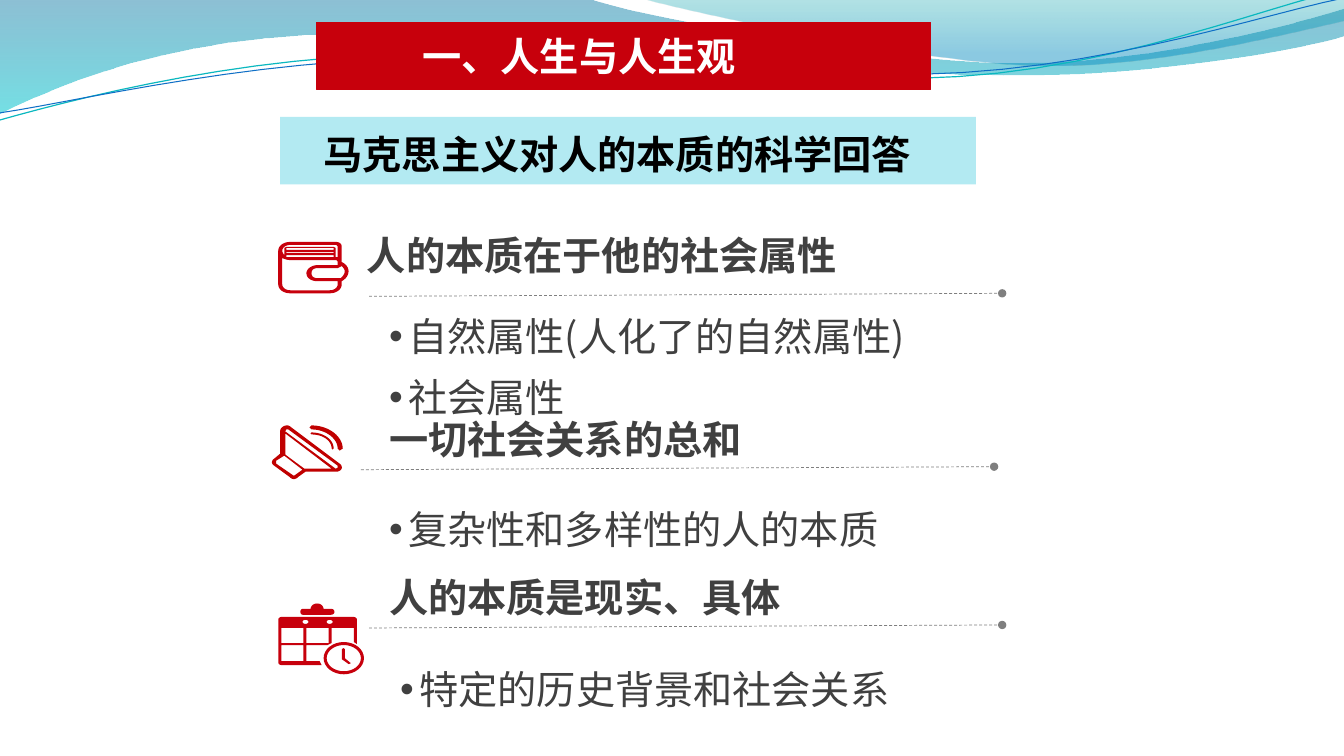
from dataclasses import dataclass
from math import cos, pi, sin

from lxml.etree import SubElement
from pptx import Presentation
from pptx.dml.color import RGBColor
from pptx.enum.dml import MSO_LINE
from pptx.enum.shapes import MSO_CONNECTOR, MSO_SHAPE
from pptx.enum.text import MSO_ANCHOR, MSO_AUTO_SIZE, PP_ALIGN
from pptx.oxml.ns import qn
from pptx.util import Inches, Pt


@dataclass(frozen=True)
class Theme:
    font: str = "Noto Sans CJK SC"
    size: int = 28
    red: str = "C7000C"
    dark_red: str = "C00000"
    pale: str = "B3EAF2"
    ink: str = "404040"
    black: str = "000000"
    white: str = "FFFFFF"
    rule: str = "7F7F7F"
    teal: str = "0AB8BF"
    blue: str = "0F6FC6"


T = Theme()
W, H = 13.33, 7.5

TITLE = "一、人生与人生观"
SUBTITLE = "马克思主义对人的本质的科学回答"
# heading, its left and top, rule start, bullets, their left, top and size
SECTIONS = [
    ("人的本质在于他的社会属性", (3.56, 2.25, 4.89, 0.55), (3.66, 2.94),
     ["自然属性(人化了的自然属性)", "社会属性"], (3.78, 2.92, 7.32, 1.3)),
    ("一切社会关系的总和", (3.78, 4.08, 3.71, 0.55), (3.58, 4.66),
     ["复杂性和多样性的人的本质"], (3.78, 4.83, 6.82, 0.69)),
    ("人的本质是现实、具体", (3.78, 5.65, 4.1, 0.55), (3.66, 6.23),
     ["特定的历史背景和社会关系"], (3.89, 6.42, 8.13, 0.69)),
]
RULE_RUN, RULE_RISE = 6.28, 0.03

# Outlines: a pair is a corner, six numbers are a Bezier curve
WAVES = [
    ([(0, 0), (5.87, 0), (6.34, 0.17, 8.85, 0.63, 10.11, 0.63), (11.38, 0.63, 12.78, 0.26, W, 0.09),
      (W, 0.36), (13.11, 0.44, 11.6, 0.76, 9.94, 0.75), (8.29, 0.75, 5.09, 0.28, 3.43, 0.34),
      (1.72, 0.36, 0.61, 0.83, 0, 1.13)],
     [(0, "0074A1", 45), (1, "00C6CF", 55)]),
    ([(6.39, 0), (6.79, 0.11, 9.09, 0.62, 10.25, 0.65), (11.41, 0.69, 12.82, 0.32, W, 0.21), (W, 0)],
     [(0, "00A1A9", 30), (0.8, "008BBF", 45)]),
]
THREADS = [
    ([(0, 1.19), (0.64, 1.01, 2.11, 0.62, 3.69, 0.55), (5.27, 0.48, 7.9, 0.87, 9.5, 0.76),
      (11.1, 0.66, 12.52, 0.08, 13.31, -0.1)], T.teal, 0.85),
    ([(0, 1.12), (0.63, 1.03, 2.18, 0.66, 3.78, 0.59), (5.37, 0.53, 7.96, 0.82, 9.55, 0.72),
      (11.15, 0.62, 12.55, 0.14, W, -0.02)], T.blue, 0.75),
]


def box(x, y, w, h):
    return [(x, y), (x + w, y), (x + w, y + h), (x, y + h)]


def oval(cx, cy, rx, ry, n=32):
    return [(cx + rx * cos(2 * pi * i / n), cy + ry * sin(2 * pi * i / n)) for i in range(n)]


WALLET = [
    [(3.39, 2.6), (3.39, 2.45), (3.39, 2.42, 3.37, 2.4, 3.33, 2.4), (2.88, 2.4),
     (2.81, 2.4, 2.76, 2.44, 2.76, 2.49), (2.76, 2.82), (2.76, 2.87, 2.81, 2.91, 2.88, 2.91),
     (3.27, 2.91), (3.34, 2.91, 3.39, 2.87, 3.39, 2.82), (3.39, 2.79), (3.48, 2.74, 3.48, 2.64, 3.39, 2.6)],
    [(2.88, 2.43), (3.33, 2.43), (3.34, 2.43, 3.35, 2.44, 3.35, 2.45), (3.35, 2.55), (3.33, 2.55),
     (3.33, 2.46), (3.31, 2.45), (2.84, 2.45), (2.82, 2.46), (2.82, 2.53),
     (2.81, 2.52, 2.8, 2.5, 2.8, 2.49), (2.8, 2.46, 2.83, 2.43, 2.88, 2.43)],
    *[box(2.84, y, 0.47, h) for y, h in ((2.46, 0.02), (2.5, 0.01), (2.53, 0.02))],
    [(3.35, 2.82), (3.35, 2.85, 3.32, 2.88, 3.27, 2.88), (2.88, 2.88), (2.83, 2.88, 2.8, 2.85, 2.8, 2.82),
     (2.8, 2.56), (2.82, 2.57, 2.85, 2.58, 2.88, 2.58), (3.33, 2.58), (3.34, 2.58, 3.35, 2.59, 3.35, 2.6),
     (3.35, 2.63), (3.15, 2.63), (3.09, 2.63, 3.04, 2.67, 3.04, 2.71),
     (3.04, 2.76, 3.09, 2.79, 3.15, 2.79), (3.35, 2.79)],
    [(3.38, 2.76), (3.15, 2.76), (3.11, 2.76, 3.09, 2.74, 3.09, 2.71), (3.09, 2.68, 3.11, 2.66, 3.15, 2.66),
     (3.35, 2.66), (3.39, 2.64), (3.4, 2.65, 3.42, 2.67, 3.42, 2.69), (3.42, 2.72, 3.4, 2.74, 3.38, 2.76)],
]
SPEAKER = [
    [(2.89, 4.24), (2.88, 4.23, 2.86, 4.22, 2.85, 4.22), (2.81, 4.22, 2.78, 4.25, 2.78, 4.27), (2.78, 4.5),
     (2.72, 4.55), (2.69, 4.57, 2.69, 4.6, 2.72, 4.62), (2.87, 4.73), (2.9, 4.76, 2.93, 4.76, 2.96, 4.73),
     (3.03, 4.68), (3.33, 4.68), (3.39, 4.68, 3.41, 4.63, 3.37, 4.6)],
    [(3, 4.66), (2.93, 4.71), (2.92, 4.72, 2.91, 4.72, 2.9, 4.71), (2.74, 4.6), (2.74, 4.57), (2.82, 4.52)],
    [(3.02, 4.65), (2.83, 4.51), (2.83, 4.3), (3.29, 4.65)],
    [(3.35, 4.64), (3.33, 4.65), (2.83, 4.28), (2.84, 4.26), (2.86, 4.26), (3.35, 4.62)],
    [(3.29, 4.45), (3.3, 4.46), (3.31, 4.45), (3.31, 4.36, 3.21, 4.29, 3.09, 4.29), (3.08, 4.3),
     (3.09, 4.31), (3.2, 4.31, 3.29, 4.37, 3.29, 4.45)],
    [(3.09, 4.26), (3.23, 4.26, 3.35, 4.35, 3.35, 4.45), (3.37, 4.47), (3.4, 4.45),
     (3.4, 4.33, 3.26, 4.22, 3.09, 4.22), (3.07, 4.24)],
]
CALENDAR = [
    [(2.98, 6.07), (2.98, 6.09, 2.99, 6.1, 3.01, 6.1), (3.28, 6.1), (3.33, 6.1, 3.33, 6.04, 3.28, 6.04),
     (3.21, 6.04), (3.2, 5.97, 3.09, 5.97, 3.08, 6.04), (3.01, 6.04), (2.99, 6.04, 2.98, 6.05, 2.98, 6.07)],
    [(3.19, 6.6), (2.8, 6.6), (2.78, 6.6, 2.76, 6.59, 2.76, 6.57), (2.76, 6.15),
     (2.76, 6.13, 2.78, 6.12, 2.8, 6.12), (3.5, 6.12), (3.52, 6.12, 3.54, 6.13, 3.54, 6.15), (3.54, 6.39),
     (3.51, 6.37), (3.51, 6.23), (3.29, 6.23), (3.29, 6.38), (3.25, 6.4), (3.04, 6.4), (3.04, 6.56),
     (3.17, 6.56)],
    box(2.79, 6.23, 0.22, 0.15), box(3.04, 6.23, 0.22, 0.15), box(2.79, 6.4, 0.22, 0.16),
    *[oval(x, 6.17, 0.03, 0.02) for x in (3.03, 3.27)],
    oval(3.41, 6.53, 0.2, 0.16), oval(3.41, 6.53, 0.17, 0.13),
    [(3.39, 6.44), (3.41, 6.43), (3.42, 6.44), (3.42, 6.53), (3.48, 6.58), (3.46, 6.59), (3.39, 6.54)],
]


def flatten(outline, steps=12):
    """Turn corners and Bezier curves into EMU points."""
    pts = [outline[0]]
    for seg in outline[1:]:
        if len(seg) == 2:
            pts.append(seg)
            continue
        x0, y0 = pts[-1]
        x1, y1, x2, y2, x3, y3 = seg
        for i in range(1, steps + 1):
            t = i / steps
            a, b, c, d = (1 - t) ** 3, 3 * t * (1 - t) ** 2, 3 * t * t * (1 - t), t ** 3
            pts.append((a * x0 + b * x1 + c * x2 + d * x3, a * y0 + b * y1 + c * y2 + d * y3))
    return [(Inches(x), Inches(y)) for x, y in pts]


def add_outline(s, outlines, close=True):
    first, *rest = [flatten(o) for o in outlines]
    fb = s.shapes.build_freeform(*first[0])
    fb.add_line_segments(first[1:], close=close)
    for pts in rest:
        fb.move_to(*pts[0])
        fb.add_line_segments(pts[1:], close=close)
    sp = fb.convert_to_shape()
    sp.shadow.inherit = False
    sp.line.fill.background()
    return sp


def paint(fill, color):
    fill.solid()
    fill.fore_color.rgb = RGBColor.from_string(color)


def write(tf, lines, color, bold=False, insets=(0.08, 0.04, 0.08, 0.04)):
    tf.margin_left, tf.margin_top, tf.margin_right, tf.margin_bottom = map(Inches, insets)
    tf.text = "\n".join(lines)
    for p in tf.paragraphs:
        p.alignment = PP_ALIGN.LEFT
        for r in p.runs:
            r.font.size, r.font.bold, r.font.name = Pt(T.size), bold, T.font
            r.font.color.rgb = RGBColor.from_string(color)
            SubElement(r.font._element, qn("a:ea"), typeface=T.font)


def add_text(s, at, lines, bullets=False):
    tf = s.shapes.add_textbox(*map(Inches, at)).text_frame
    tf.word_wrap = bullets
    tf.auto_size = MSO_AUTO_SIZE.SHAPE_TO_FIT_TEXT
    write(tf, lines, T.ink, bold=not bullets)
    for p in tf.paragraphs if bullets else ():
        p.line_spacing = 1.3
        pPr = p._p.get_or_add_pPr()
        pPr.set("marL", str(Inches(0.19)))
        pPr.set("indent", str(-Inches(0.19)))
        SubElement(pPr, qn("a:buFont"), typeface="Arial")
        SubElement(pPr, qn("a:buChar"), char="•")


def add_rule(s, x, y):
    ends = map(Inches, (x, y, x + RULE_RUN, y - RULE_RISE))
    c = s.shapes.add_connector(MSO_CONNECTOR.STRAIGHT, *ends)
    paint(c.line.fill, T.rule)
    c.line.width, c.line.dash_style = Pt(0.5), MSO_LINE.DASH
    SubElement(c.line._get_or_add_ln(), qn("a:tailEnd"), type="oval")
    SubElement(c._element.spPr, qn("a:effectLst"))


def add_background(s):
    for outline, stops in WAVES:
        sp = add_outline(s, [outline])
        sp.fill.gradient()
        sp.fill.gradient_angle = 270
        for stop, (pos, color, alpha) in zip(sp.fill.gradient_stops, stops):
            stop.position = pos
            stop.color.rgb = RGBColor.from_string(color)
            clr = stop._gs.find(qn("a:srgbClr"))
            SubElement(clr, qn("a:alpha"), val=str(alpha * 1000))
    for outline, color, width in THREADS:
        sp = add_outline(s, [outline], close=False)
        sp.fill.background()
        paint(sp.line.fill, color)
        sp.line.width = Pt(width)


def add_bands(s):
    title = s.shapes.title
    title.element.getparent().append(title.element)  # in front of the waves
    title.left, title.top, title.width, title.height = map(Inches, (3.14, 0.22, 6.09, 0.67))
    paint(title.fill, T.red)
    paint(title.line.fill, T.red)
    title.line.width = Pt(0.75)
    band = s.shapes.add_shape(MSO_SHAPE.RECTANGLE, *map(Inches, (2.78, 1.16, 6.9, 0.67)))
    band.shadow.inherit = False
    paint(band.fill, T.pale)
    band.line.fill.background()
    for sp, text, color, insets in ((title, TITLE, T.white, (1.05, 0.05, 0.1, 0.05)),
                                    (band, SUBTITLE, T.black, (0.43, 0.09, 0.1, 0.02))):
        tf = sp.text_frame
        tf.auto_size, tf.vertical_anchor = MSO_AUTO_SIZE.NONE, MSO_ANCHOR.MIDDLE
        write(tf, [text], color, True, insets)


def main():
    prs = Presentation()
    prs.slide_width, prs.slide_height = Inches(W), Inches(H)
    s = prs.slides.add_slide(prs.slide_layouts[5])
    add_background(s)
    for heading, heading_at, rule_start, bullets, bullets_at in SECTIONS:
        add_text(s, bullets_at, bullets, bullets=True)
        add_text(s, heading_at, [heading])
        add_rule(s, *rule_start)
    for icon, color in ((WALLET, T.red), (SPEAKER, T.dark_red), (CALENDAR, T.red)):
        paint(add_outline(s, icon).fill, color)
    add_bands(s)
    prs.save("out.pptx")


if __name__ == "__main__":
    main()
